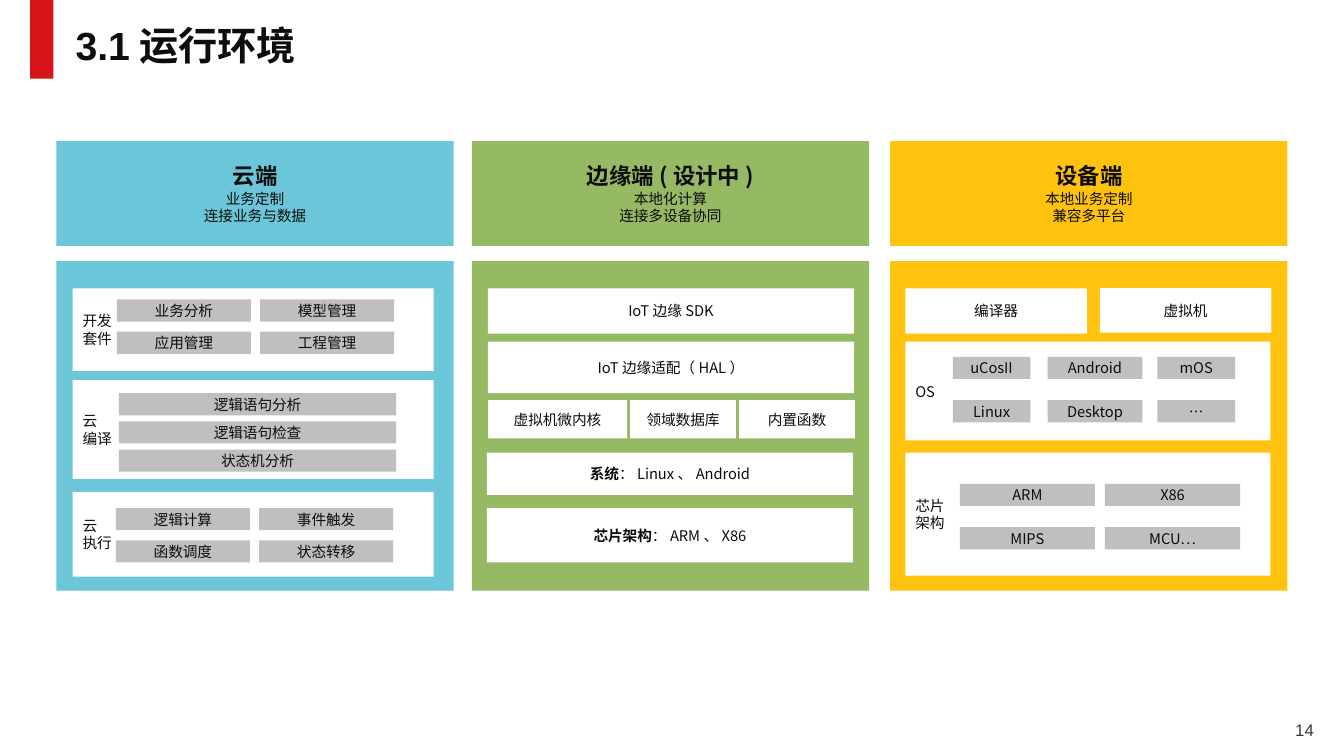
from dataclasses import dataclass

from lxml.etree import SubElement
from pptx import Presentation
from pptx.dml.color import RGBColor
from pptx.enum.shapes import MSO_SHAPE
from pptx.enum.text import MSO_ANCHOR, PP_ALIGN
from pptx.oxml.ns import qn
from pptx.util import Inches, Pt


@dataclass(frozen=True)
class Theme:
    red: str = "D71418"
    blue: str = "6AC6D8"
    green: str = "96B963"
    yellow: str = "FFC30F"
    white: str = "FFFFFF"
    gray: str = "BFBFBF"
    ink: str = "0D0D0D"
    number: str = "3B3838"
    latin: str = "Arial"
    chinese: str = "Noto Sans CJK SC"
    title_size: float = 28
    heading_size: float = 16
    number_size: float = 12
    body_size: float = 10.5


theme = Theme()


def style_span(span, size=theme.body_size, bold=False, color=theme.ink, latin=theme.chinese):
    span.font.size = Pt(size)
    span.font.bold = bold
    span.font.color.rgb = RGBColor.from_string(color)
    span.font.name = latin
    SubElement(span._r.get_or_add_rPr(), qn("a:ea")).set("typeface", theme.chinese)


def add_box(place, fill, text="", align=PP_ALIGN.CENTER):
    box = page.shapes.add_shape(MSO_SHAPE.RECTANGLE, *(Inches(n) for n in place))
    box.shadow.inherit = False
    box.fill.solid()
    box.fill.fore_color.rgb = RGBColor.from_string(fill)
    box.line.fill.background()
    box.text_frame.text = text
    for para in box.text_frame.paragraphs:
        para.alignment = align
        for span in para.runs:
            style_span(span)
    return box


deck = Presentation()
deck.slide_width, deck.slide_height = Inches(13.33), Inches(7.5)
page = deck.slides.add_slide(deck.slide_layouts[5])

# Title with its red marker
add_box((0.3, 0, 0.23, 0.78), theme.red)
title = page.shapes.title
title.left, title.top, title.width, title.height = (Inches(n) for n in (0.65, 0.23, 11.5, 0.49))
title.text_frame.text = "3.1运行环境"
title.text_frame.vertical_anchor = MSO_ANCHOR.MIDDLE
title_para = title.text_frame.paragraphs[0]
title_para.alignment = PP_ALIGN.LEFT
title_para.line_spacing = 0.9
style_span(title_para.runs[0], theme.title_size, True, latin=theme.latin)

# Page number
number = page.shapes.add_textbox(Inches(10.13), Inches(7.09), Inches(3), Inches(0.4))
number.text_frame.word_wrap = True
number.text_frame.text = "14"
number_para = number.text_frame.paragraphs[0]
number_para.alignment = PP_ALIGN.RIGHT
style_span(number_para.runs[0], theme.number_size, color=theme.number, latin=theme.latin)

# Three columns: heading card above, coloured panel below
columns = [
    (0.56, theme.blue, "云端\n业务定制\n连接业务与数据"),
    (4.68, theme.green, "边缘端(设计中)\n本地化计算\n连接多设备协同"),
    (8.83, theme.yellow, "设备端\n本地业务定制\n兼容多平台"),
]
for left, color, text in columns:
    card = add_box((left, 1.4, 3.94, 1.04), color, text)
    heading = card.text_frame.paragraphs[0].runs[0]
    heading.font.size, heading.font.bold = Pt(theme.heading_size), True
    add_box((left, 2.59, 3.94, 3.27), color)

# White boxes with centred text
modules = [
    (4.84, 2.86, 3.63, 0.45, "IoT边缘SDK"),
    (4.84, 3.39, 3.63, 0.51, "IoT边缘适配（HAL）"),
    (4.84, 3.97, 1.38, 0.38, "虚拟机微内核"),
    (6.25, 3.97, 1.05, 0.38, "领域数据库"),
    (7.33, 3.97, 1.15, 0.38, "内置函数"),
    (8.98, 2.86, 1.8, 0.45, "编译器"),
    (10.91, 2.86, 1.7, 0.44, "虚拟机"),
]
for *place, text in modules:
    add_box(place, theme.white, text)

# Edge platforms: bold label followed by its values
for top, height, label, values in [
    (4.49, 0.42, "系统", "：Linux、Android"),
    (5.04, 0.54, "芯片架构", "：ARM、X86"),
]:
    platform = add_box((4.83, top, 3.63, height), theme.white, label)
    para = platform.text_frame.paragraphs[0]
    para.runs[0].font.bold = True
    span = para.add_run()
    span.text = values
    style_span(span)

# White groups with a label at the left
groups = [
    (0.72, 2.86, 3.58, 0.82, "开发\n套件"),
    (0.72, 3.77, 3.58, 0.98, "云\n编译"),
    (0.72, 4.88, 3.58, 0.84, "云\n执行"),
    (8.98, 3.39, 3.62, 0.98, "OS"),
    (8.98, 4.49, 3.62, 1.22, "芯片\n架构"),
]
for *place, text in groups:
    add_box(place, theme.white, text, PP_ALIGN.LEFT)

# Gray tile grids: top, row step, (left, width) of each column, rows of text
grids = [
    (2.97, 0.32, [(1.16, 1.33), (2.58, 1.33)], [["业务分析", "模型管理"], ["应用管理", "工程管理"]]),
    (3.9, 0.28, [(1.18, 2.75)], [["逻辑语句分析"], ["逻辑语句检查"], ["状态机分析"]]),
    (5.04, 0.32, [(1.15, 1.33), (2.57, 1.33)], [["逻辑计算", "事件触发"], ["函数调度", "状态转移"]]),
    (3.54, 0.43, [(9.45, 0.77), (10.39, 0.94), (11.48, 0.77)],
     [["uCosII", "Android", "mOS"], ["Linux", "Desktop", "…"]]),
    (4.8, 0.43, [(9.52, 1.34), (10.96, 1.34)], [["ARM", "X86"], ["MIPS", "MCU…"]]),
]
for top, step, tracks, rows in grids:
    for row, texts in enumerate(rows):
        for (left, width), text in zip(tracks, texts):
            add_box((left, top + row * step, width, 0.22), theme.gray, text)

deck.save("out.pptx")
